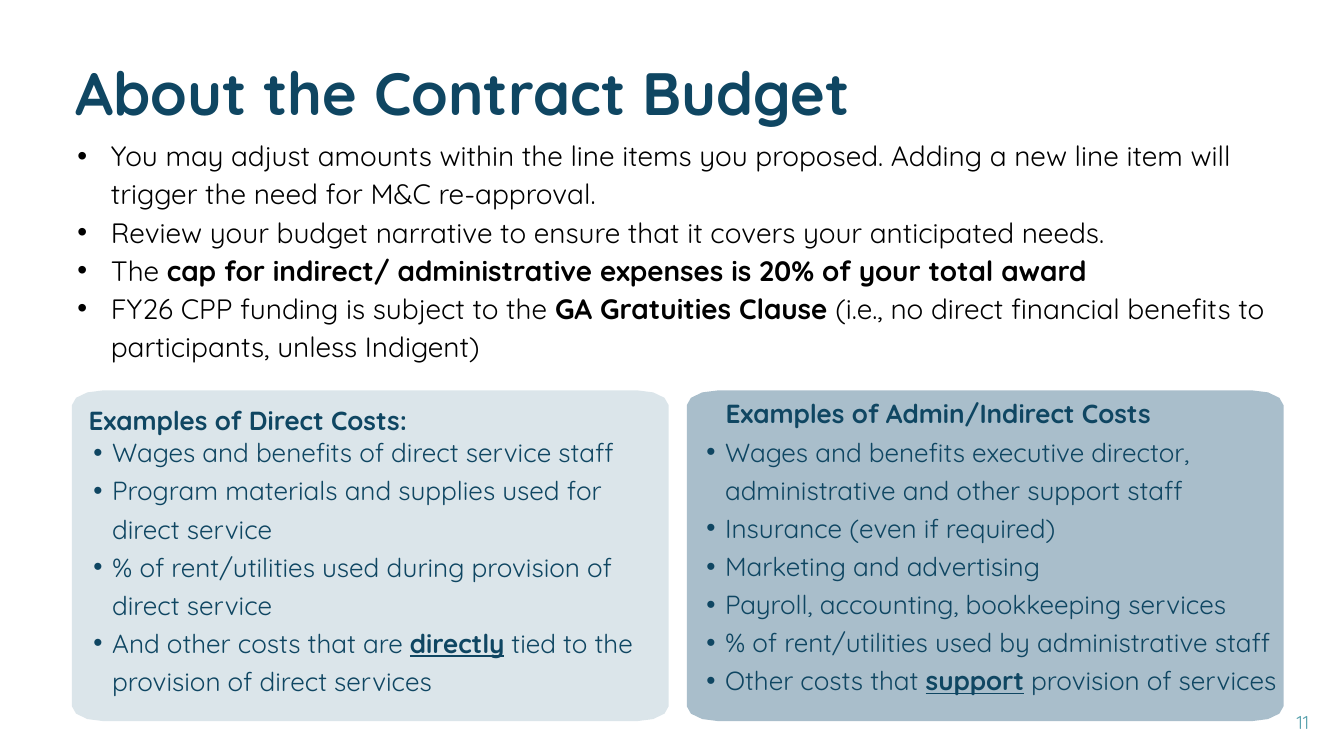
"""Build the contract budget slide with its two cost example panels."""
from math import cos, pi, sin

from lxml import etree
from pptx import Presentation
from pptx.dml.color import RGBColor
from pptx.enum.text import MSO_ANCHOR, MSO_AUTO_SIZE, PP_ALIGN
from pptx.oxml.ns import qn
from pptx.util import Inches, Pt

LEFT, RIGHT = PP_ALIGN.LEFT, PP_ALIGN.RIGHT
TOP, MIDDLE = MSO_ANCHOR.TOP, MSO_ANCHOR.MIDDLE
NO_AUTOFIT = MSO_AUTO_SIZE.NONE

FONT = "Quicksand"
COLORS = {"navy": "0F4662", "black": "000000", "teal": "5AA2AE",
          "pale": "DBE5EA", "steel": "A9BECB"}
BOLD = {"bold": True}
STRONG = {"bold": True, "underline": True}

TITLE = "About the Contract Budget"
RULES = [
    [("You may adjust amounts within the line items you proposed. Adding a new line item "
      "will trigger the need for M&C re-approval.", {})],
    [("Review your budget narrative to ensure that it covers your anticipated needs.", {})],
    [("The ", {}),
     ("cap for indirect/ administrative expenses is 20% of your total award", BOLD)],
    [("FY26 CPP funding is subject to the ", {}), ("GA Gratuities Clause ", BOLD),
     ("(i.e., no direct financial benefits to participants, unless Indigent)", {})],
]
PANELS = [
    {"left": 1.07, "fill": "pale", "heading": "Examples of Direct Costs:",
     "heading_at": (1.32, 5.94, 7.28, 0.52), "list_at": (1.1, 6.4, 8.84, 3.98),
     "items": [
         [("Wages and benefits of direct service staff", {})],
         [("Program materials and supplies used for direct service", {})],
         [("% of rent/utilities used during provision of direct service", {})],
         [("And other costs that are ", {}), ("directly", STRONG),
          (" tied to the provision of direct services", {})]]},
    {"left": 10.22, "fill": "steel", "heading": "Examples of Admin/Indirect Costs",
     "heading_at": (10.8, 5.83, 8.26, 0.52), "list_at": (10.22, 6.39, 8.82, 3.98),
     "items": [
         [("Wages and benefits executive director, administrative and other support staff", {})],
         [("Insurance (even if required)", {})],
         [("Marketing and advertising", {})],
         [("Payroll, accounting, bookkeeping services", {})],
         [("% of rent/utilities used by administrative staff", {})],
         [("Other costs that ", {}), ("support", STRONG), (" provision of services", {})]]},
]
PAGE_NUMBER = "11"

PANEL_TOP, PANEL_WIDTH, PANEL_HEIGHT = 5.81, 8.88, 4.92
CORNER_X, CORNER_Y, CORNER_STEPS = 0.46, 0.22, 3


def place(box, at):
    for name, value in zip(("left", "top", "width", "height"), at):
        setattr(box, name, Inches(value))


def add_bullet(para, indent, hanging):
    properties = para._p.get_or_add_pPr()
    properties.set("marL", str(Inches(indent)))
    properties.set("indent", str(-Inches(hanging)))
    etree.SubElement(properties, qn("a:buFont")).set("typeface", "Arial")
    etree.SubElement(properties, qn("a:buChar")).set("char", "•")


def write(box, paragraphs, size, color, spacing=None, bullet=None, level=0,
          align=LEFT, anchor=TOP, margins=(0, 0)):
    frame = box.text_frame
    across, down = (Inches(margin) for margin in margins)
    layout = {"word_wrap": True, "auto_size": NO_AUTOFIT, "vertical_anchor": anchor,
              "margin_left": across, "margin_right": across,
              "margin_top": down, "margin_bottom": down}
    for name, value in layout.items():
        setattr(frame, name, value)
    for index, spans in enumerate(paragraphs):
        para = frame.add_paragraph() if index else frame.paragraphs[0]
        para.alignment, para.level = align, level
        if spacing:
            para.line_spacing = Pt(spacing)
        para.space_before = para.space_after = Pt(0)
        if bullet:
            add_bullet(para, *bullet)
        for text, extra in spans:
            span = para.add_run()
            span.text = text
            span.font.color.rgb = RGBColor.from_string(COLORS[color])
            font = {"name": FONT, "size": Pt(size), "bold": False, **extra}
            for name, value in font.items():
                setattr(span.font, name, value)


def add_text(page, at, paragraphs, size, color, **options):
    box = page.shapes.add_textbox(*(Inches(value) for value in at))
    write(box, paragraphs, size, color, **options)


def add_panel(page, left, fill):
    center_x, center_y = left + PANEL_WIDTH / 2, PANEL_TOP + PANEL_HEIGHT / 2
    reach_x, reach_y = PANEL_WIDTH / 2 - CORNER_X, PANEL_HEIGHT / 2 - CORNER_Y
    points = []
    for quarter, (side_x, side_y) in enumerate([(1, 1), (-1, 1), (-1, -1), (1, -1)]):
        for step in range(CORNER_STEPS + 1):
            angle = (quarter + step / CORNER_STEPS) * pi / 2
            points.append((Inches(center_x + side_x * reach_x + CORNER_X * cos(angle)),
                           Inches(center_y + side_y * reach_y + CORNER_Y * sin(angle))))
    builder = page.shapes.build_freeform(*points[0])
    builder.add_line_segments(points[1:], close=True)
    panel = builder.convert_to_shape()
    panel.shadow.inherit = False
    panel.fill.solid()
    panel.fill.fore_color.rgb = RGBColor.from_string(COLORS[fill])
    panel.line.fill.background()


def main():
    deck = Presentation()
    deck.slide_width, deck.slide_height = Inches(20), Inches(11.25)
    page = deck.slides.add_slide(deck.slide_layouts.get_by_name("Title Only"))
    title = page.shapes.title
    place(title, (1.12, 0.65, 15.39, 1.16))
    write(title, [[(TITLE, BOLD)]], 64, "navy", spacing=89.6)
    add_text(page, (1.15, 2, 17.86, 3.41), RULES, 30, "black",
             spacing=40.8, bullet=(0.5, 0.5))
    for panel in PANELS:
        add_panel(page, panel["left"], panel["fill"])
    for panel in PANELS:
        add_text(page, panel["list_at"], panel["items"], 28, "navy",
                 spacing=40.8, bullet=(0.57, 0.28), level=1)
        add_text(page, panel["heading_at"], [[(panel["heading"], BOLD)]], 28, "navy",
                 spacing=39.2)
    add_text(page, (17.25, 10.54, 2.33, 0.4), [[(PAGE_NUMBER, {})]], 20, "teal",
             align=RIGHT, anchor=MIDDLE, margins=(0.1, 0.05))
    deck.save("out.pptx")


if __name__ == "__main__":
    main()
